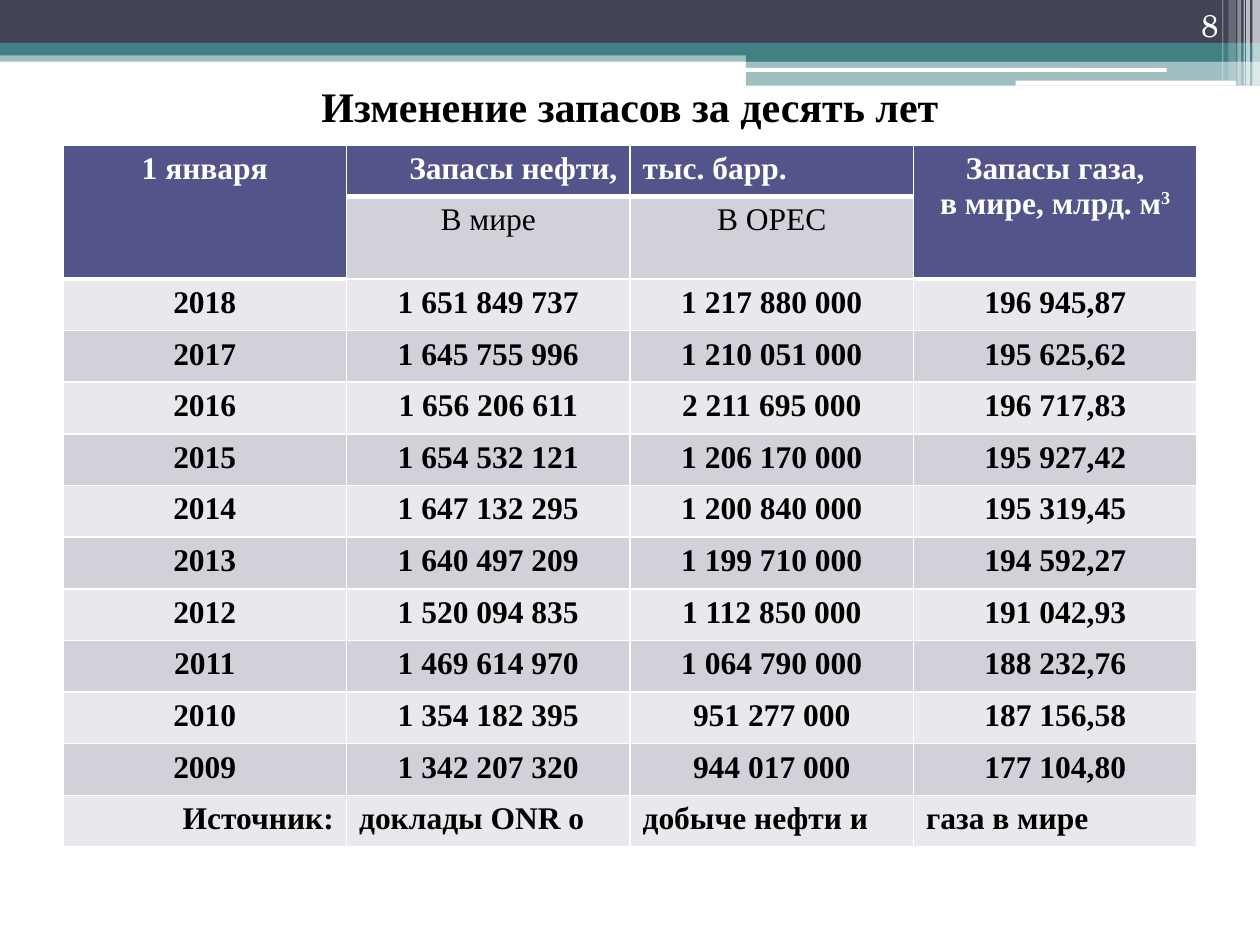
from dataclasses import dataclass

from lxml import etree
from pptx import Presentation
from pptx.dml.color import RGBColor
from pptx.enum.shapes import MSO_SHAPE
from pptx.enum.text import MSO_ANCHOR, PP_ALIGN
from pptx.oxml.ns import qn
from pptx.util import Inches, Pt

RECT, ROUND = MSO_SHAPE.RECTANGLE, MSO_SHAPE.ROUNDED_RECTANGLE
LEFT, CENTER, RIGHT = PP_ALIGN.LEFT, PP_ALIGN.CENTER, PP_ALIGN.RIGHT
MIDDLE, BOTTOM = MSO_ANCHOR.MIDDLE, MSO_ANCHOR.BOTTOM


@dataclass(frozen=True)
class Theme:
    dark: str = "424456"
    teal: str = "438086"
    header: str = "53548A"
    band_dark: str = "D1D1DA"
    band_light: str = "E9E9ED"
    white: str = "FFFFFF"
    black: str = "000000"
    font: str = "Times New Roman"
    number_font: str = "TeX Gyre Schola"
    title_size: int = 24
    body_size: int = 18
    thin_line: int = 1
    thick_line: int = 3


THEME = Theme()
TITLE = "Изменение запасов за десять лет"
PAGE_NUMBER = "8"

HEADER = ["1 января", "Запасы нефти,", "тыс. барр.", "Запасы газа,\nв мире, млрд. м^3"]
SUBHEADER = ["", "В мире", "В ОРЕС", ""]
RESERVES = [
    ["2018", "1 651 849 737", "1 217 880 000", "196 945,87"],
    ["2017", "1 645 755 996", "1 210 051 000", "195 625,62"],
    ["2016", "1 656 206 611", "2 211 695 000", "196 717,83"],
    ["2015", "1 654 532 121", "1 206 170 000", "195 927,42"],
    ["2014", "1 647 132 295", "1 200 840 000", "195 319,45"],
    ["2013", "1 640 497 209", "1 199 710 000", "194 592,27"],
    ["2012", "1 520 094 835", "1 112 850 000", "191 042,93"],
    ["2011", "1 469 614 970", "1 064 790 000", "188 232,76"],
    ["2010", "1 354 182 395", "951 277 000", "187 156,58"],
    ["2009", "1 342 207 320", "944 017 000", "177 104,80"],
]
SOURCE = ["Источник:", "доклады ONR о", "добыче нефти и", "газа в мире"]
ROWS = [HEADER, SUBHEADER, *RESERVES, SOURCE]
ALIGNMENTS = {0: [CENTER, RIGHT, LEFT, CENTER], len(ROWS) - 1: [RIGHT, LEFT, LEFT, LEFT]}
MERGED_COLUMNS = (0, 3)

# shape, left, top, width, height, colour, opacity in percent
BANNER = [
    (RECT, 0, 0.4, 10, 0.09, THEME.teal, 50),
    (RECT, 0, 0, 10, 0.34, THEME.dark, 100),
    (RECT, 0, 0.34, 10, 0.1, THEME.teal, 100),
    (RECT, 5.92, 0.39, 4.08, 0.1, THEME.teal, 100),
    (RECT, 5.92, 0.48, 4.08, 0.2, THEME.teal, 50),
    (ROUND, 5.91, 0.54, 3.35, 0.03, THEME.white, 100),
    (ROUND, 8.06, 0.64, 1.75, 0.04, THEME.white, 100),
]
# left, width, height, opacity in percent
STRIPES = [
    (9.94, 0.06, 0.68, 65),
    (9.89, 0.03, 0.68, 65),
    (9.87, 0.01, 0.68, 60),
    (9.82, 0.03, 0.68, 40),
    (9.75, 0.06, 0.64, 20),
    (9.7, 0.01, 0.64, 30),
]
MARGIN = 0.5
TABLE_TOP, ROW_HEIGHT, SUBHEADER_HEIGHT = 1.15, 0.41, 0.65


def color(value):
    return RGBColor.from_string(value)


def write(frame, text, *, size=THEME.body_size, font=THEME.font, ink=THEME.black,
          bold=False, align=CENTER):
    """Fill a text frame; newlines split paragraphs and ^ starts a superscript."""
    for index, line in enumerate(text.split("\n")):
        paragraph = frame.add_paragraph() if index else frame.paragraphs[0]
        paragraph.alignment = align
        for part, words in enumerate(line.split("^")):
            run = paragraph.add_run()
            run.text = words
            run.font.size, run.font.name, run.font.bold = Pt(size), font, bold
            run.font.color.rgb = color(ink)
            if part:
                run.font._element.set("baseline", "30000")


def add_bar(slide, kind, left, top, width, height, fill, opacity):
    shape = slide.shapes.add_shape(kind, *map(Inches, (left, top, width, height)))
    shape.shadow.inherit = False
    shape.line.fill.background()
    shape.fill.solid()
    shape.fill.fore_color.rgb = color(fill)
    if opacity < 100:
        tint = shape.fill._xPr.find(".//" + qn("a:srgbClr"))
        etree.SubElement(tint, qn("a:alpha"), val=str(opacity * 1000))


def set_borders(cell, top, bottom):
    widths = {"L": THEME.thin_line, "R": THEME.thin_line, "T": top, "B": bottom}
    properties = cell._tc.get_or_add_tcPr()
    for index, (side, width) in enumerate(widths.items()):
        line = etree.Element(qn(f"a:ln{side}"), w=str(Pt(width)))
        fill = etree.SubElement(line, qn("a:solidFill"))
        etree.SubElement(fill, qn("a:srgbClr"), val=THEME.white)
        properties.insert(index, line)


def is_header(row, column):
    return row == 0 or (row == 1 and column in MERGED_COLUMNS)


def rule_width(row, column):
    """Width of the rule below a cell: thick where the header meets the body."""
    ends_header = is_header(row, column) and not is_header(row + 1, column)
    return THEME.thick_line if ends_header else THEME.thin_line


def add_reserves_table(slide, slide_width):
    columns = len(HEADER)
    width = slide_width - 2 * MARGIN
    heights = [ROW_HEIGHT] * len(ROWS)
    heights[1] = SUBHEADER_HEIGHT
    table = slide.shapes.add_table(
        len(ROWS), columns,
        *map(Inches, (MARGIN, TABLE_TOP, width, sum(heights)))).table
    table.first_row = table.horz_banding = False
    for column in table.columns:
        column.width = Inches(width / columns)
    for row, height in zip(table.rows, heights):
        row.height = Inches(height)

    for r, texts in enumerate(ROWS):
        for c, text in enumerate(texts):
            cell, header = table.cell(r, c), is_header(r, c)
            band = THEME.band_dark if r % 2 else THEME.band_light
            cell.fill.solid()
            cell.fill.fore_color.rgb = color(THEME.header if header else band)
            set_borders(cell, rule_width(r - 1, c), rule_width(r, c))
            if text:
                write(cell.text_frame, text, bold=r != 1,
                      ink=THEME.white if header else THEME.black,
                      align=ALIGNMENTS.get(r, [CENTER] * columns)[c])
    for c in MERGED_COLUMNS:
        table.cell(0, c).merge(table.cell(1, c))


def main():
    presentation = Presentation()
    presentation.slide_width, presentation.slide_height = Inches(10), Inches(7.5)
    slide = presentation.slides.add_slide(presentation.slide_layouts[5])

    for bar in BANNER:
        add_bar(slide, *bar)
    for left, width, height, opacity in STRIPES:
        add_bar(slide, RECT, left, 0, width, height, THEME.white, opacity)

    title = slide.shapes.title
    title.left, title.top, title.width, title.height = map(Inches, (MARGIN, 0.52, 9, 0.63))
    title.text_frame.vertical_anchor = MIDDLE
    write(title.text_frame, TITLE, size=THEME.title_size, bold=True)

    add_reserves_table(slide, presentation.slide_width.inches)

    number = slide.shapes.add_textbox(*map(Inches, (8.94, 0, 0.83, 0.4))).text_frame
    number.word_wrap = True
    number.vertical_anchor = BOTTOM
    write(number, PAGE_NUMBER, font=THEME.number_font, ink=THEME.white, align=RIGHT)

    presentation.save("out.pptx")


if __name__ == "__main__":
    main()
